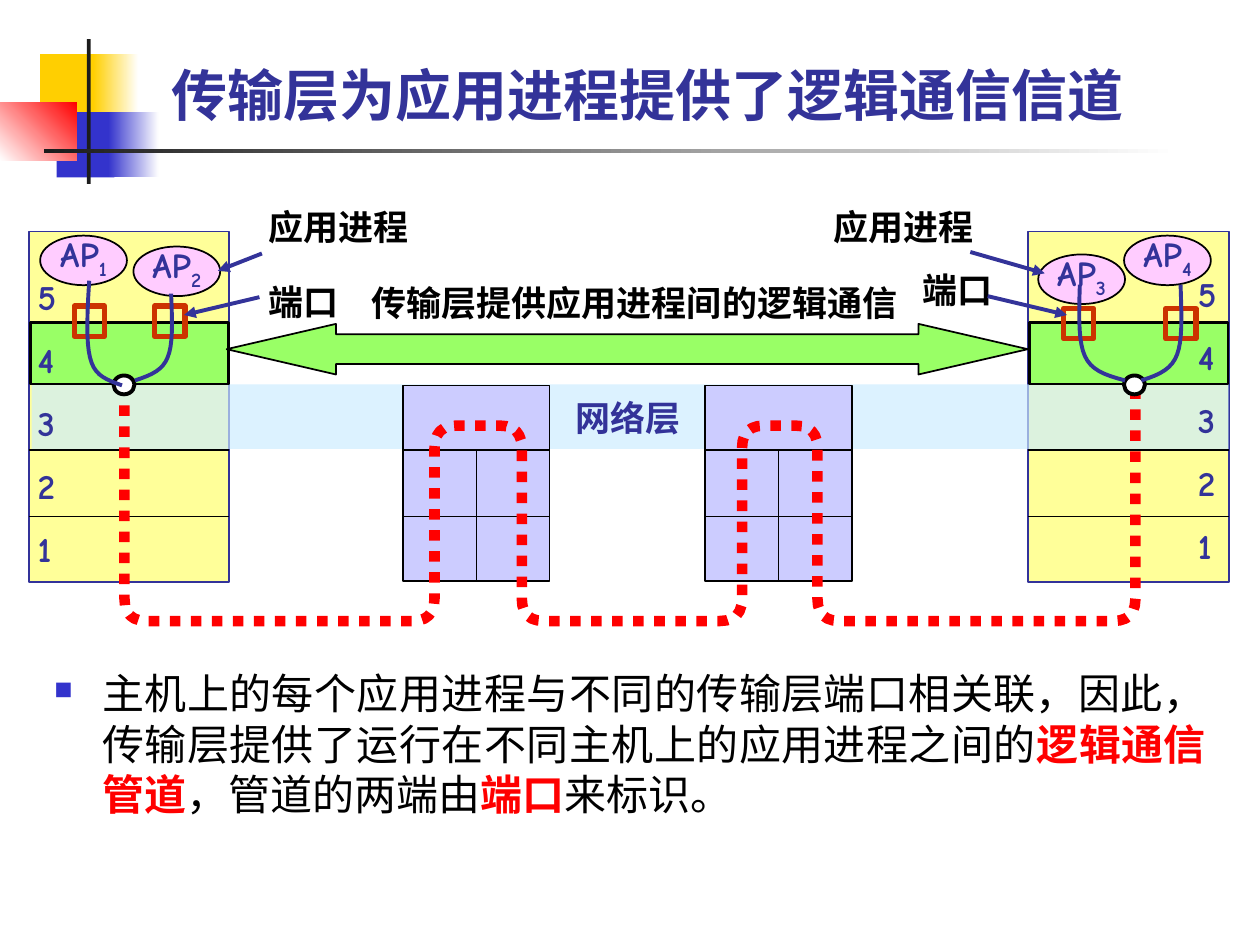
import math
from dataclasses import dataclass
from typing import Optional

import pptx
import pptx.dml.color
import pptx.enum.dml
import pptx.enum.shapes
import pptx.enum.text
import pptx.oxml.ns
import pptx.oxml.xmlchemy
import pptx.util
from lxml import etree

Cm, Pt = pptx.util.Cm, pptx.util.Pt
SHAPE = pptx.enum.shapes.MSO_SHAPE
ANCHOR = pptx.enum.text.MSO_ANCHOR
ALIGN = pptx.enum.text.PP_ALIGN
qn = pptx.oxml.ns.qn
Point = tuple[float, float]


@dataclass(frozen=True)
class Theme:
    heading_font: str = "Noto Sans CJK SC"
    label_font: str = "Comic Neue"
    title_size: int = 32
    body_size: int = 24
    label_size: int = 20
    navy: str = "333399"
    black: str = "000000"
    white: str = "FFFFFF"
    red: str = "FF0000"
    gold: str = "FFCF01"
    blue: str = "3333CC"
    charcoal: str = "1C1C1C"
    host: str = "FFFF99"
    router: str = "CCCCFF"
    transport: str = "99FF66"
    network: str = "CCECFF"
    process: str = "FFCCFF"
    port: str = "CC3300"


THEME = Theme()


@dataclass(frozen=True)
class Box:
    left: float
    top: float
    width: float
    height: float

    def lengths(self):
        return Cm(self.left), Cm(self.top), Cm(self.width), Cm(self.height)


@dataclass(frozen=True)
class Process:
    number: str
    oval: Point
    port: Point
    link: tuple[Point, ...]


@dataclass(frozen=True)
class Label:
    text: str
    left: float
    top: float
    width: float
    color: str = THEME.black


def rgb(color: str):
    return pptx.dml.color.RGBColor.from_string(color)


def set_line(shape, color: Optional[str], width: float) -> None:
    if color is None:
        shape.line.fill.background()
    else:
        shape.line.color.rgb = rgb(color)
        shape.line.width = Pt(width)


def add_shape(slide, kind, box: Box, fill: Optional[str] = None,
              line: Optional[str] = None, width: float = 1):
    shape = slide.shapes.add_shape(kind, *box.lengths())
    shape.shadow.inherit = False
    if fill:
        shape.fill.solid()
        shape.fill.fore_color.rgb = rgb(fill)
    else:
        shape.fill.background()
    set_line(shape, line, width)
    return shape


def add_gradient(slide, box: Box, start: str, end: str, angle: float = 0) -> None:
    shape = add_shape(slide, SHAPE.RECTANGLE, box)
    shape.fill.gradient()
    shape.fill.gradient_angle = angle
    for stop, color in zip(shape.fill.gradient_stops, (start, end)):
        stop.color.rgb = rgb(color)


def add_line(slide, start: Point, end: Point, color: str = THEME.black,
             width: float = 1, arrow: bool = False):
    connector = slide.shapes.add_connector(
        pptx.enum.shapes.MSO_CONNECTOR.STRAIGHT, *map(Cm, start + end))
    set_line(connector, color, width)
    if arrow:
        tail = etree.SubElement(connector.line._get_or_add_ln(), qn("a:tailEnd"))
        tail.set("type", "triangle")
    etree.SubElement(connector._element.spPr, qn("a:effectLst"))
    return connector


def bezier(controls, steps: int = 16) -> list[Point]:
    """Sample a Bézier curve of any degree."""
    degree = len(controls) - 1

    def at(t: float, axis: int) -> float:
        return sum(math.comb(degree, i) * t**i * (1 - t)**(degree - i) * point[axis]
                   for i, point in enumerate(controls))

    return [(at(i / steps, 0), at(i / steps, 1)) for i in range(steps + 1)]


def rounded(corners: list[Point], radius: float) -> list[Point]:
    """Replace each inner corner of a polyline by a small curve."""
    def toward(start: Point, end: Point) -> Point:
        share = radius / math.dist(start, end)
        return tuple(a + (b - a) * share for a, b in zip(start, end))

    points = [corners[0]]
    for before, corner, after in zip(corners, corners[1:], corners[2:]):
        points += bezier((toward(corner, before), corner, toward(corner, after)), 6)
    return points + [corners[-1]]


def add_curve(slide, points: list[Point], color: str, width: float):
    first, *rest = [(Cm(x), Cm(y)) for x, y in points]
    builder = slide.shapes.build_freeform(*first)
    builder.add_line_segments(rest, close=False)
    curve = builder.convert_to_shape()
    curve.shadow.inherit = False
    curve.fill.background()
    set_line(curve, color, width)
    return curve


def set_font(paragraph, name: str, size: int, color: str, bold: bool) -> None:
    font = paragraph.font
    font.name, font.size, font.bold = name, Pt(size), bold
    font.color.rgb = rgb(color)


def add_text(slide, box: Box, lines: list[str], color: str, size: int = THEME.label_size,
             name: str = THEME.label_font, spacing: float = 1, anchor=ANCHOR.TOP):
    frame = slide.shapes.add_textbox(*box.lengths()).text_frame
    frame.word_wrap = False
    frame.vertical_anchor = anchor
    frame.text = "\n".join(lines)
    for paragraph in frame.paragraphs:
        paragraph.line_spacing = spacing
        set_font(paragraph, name, size, color, True)


def add_decoration(slide) -> None:
    add_shape(slide, SHAPE.RECTANGLE, Box(0.81, 1.09, 1.22, 1.32), THEME.gold)
    add_gradient(slide, Box(1.88, 1.09, 0.91, 1.32), THEME.gold, THEME.white)
    add_shape(slide, SHAPE.RECTANGLE, Box(1.14, 2.26, 1.17, 1.32), THEME.blue)
    add_gradient(slide, Box(2.18, 2.26, 1.02, 1.32), THEME.blue, THEME.white)
    add_gradient(slide, Box(0, 2.06, 1.55, 1.17), THEME.white, THEME.red, 45)
    add_shape(slide, SHAPE.RECTANGLE, Box(1.75, 0.79, 0.08, 2.92), THEME.charcoal)
    add_gradient(slide, Box(0.89, 3, 22.86, 0.08), THEME.charcoal, THEME.white)


def add_dividers(slide, left: float, width: float) -> None:
    for y in (9.07, 10.41):
        add_line(slide, (left, y), (left + width, y))


def add_router(slide, left: float) -> None:
    body = Box(left, 7.77, 2.95, 3.94)
    shape = add_shape(slide, SHAPE.RECTANGLE, body, THEME.router, THEME.black)
    add_dividers(slide, left, body.width)
    middle = left + body.width / 2
    connector = add_line(slide, (middle, 9.07), (middle, body.top + body.height))
    connector.end_connect(shape, 2)


def add_layers(slide) -> None:
    hosts = (0.58, 20.73)
    for left in hosts:
        add_shape(slide, SHAPE.RECTANGLE, Box(left, 4.67, 4.04, 7.06), THEME.host, THEME.navy)
    band = add_shape(slide, SHAPE.RECTANGLE, Box(0.64, 7.75, 24.13, 1.3), THEME.network)
    color = band._element.spPr.find(".//" + qn("a:srgbClr"))
    etree.SubElement(color, qn("a:alpha")).set("val", "68000")
    for left, number_left, number_top in zip(hosts, (0.51, 23.9), (5, 4.95)):
        add_dividers(slide, left, 4.04)
        add_shape(slide, SHAPE.RECTANGLE, Box(left + 0.03, 6.5, 4, 1.24),
                  THEME.transport, THEME.black, 1.5)
        add_text(slide, Box(number_left, number_top, 0.94, 6.53), list("54321"),
                 THEME.navy, spacing=1.5)
    for left in (8.13, 14.22):
        add_router(slide, left)


def add_route(slide) -> None:
    bottom, top, ends = 12.52, 8.58, 7.75
    columns = (2.51, 8.76, 10.52, 14.96, 16.48, 22.89)
    corners = [(columns[0], ends)]
    for i, (left, right) in enumerate(zip(columns, columns[1:])):
        y = top if i % 2 else bottom
        corners += [(left, y), (right, y)]
    corners.append((columns[-1], ends))
    route = add_curve(slide, rounded(corners, 0.45), THEME.red, 6)
    route.line.dash_style = pptx.enum.dml.MSO_LINE.ROUND_DOT


def add_process(slide, process: Process) -> None:
    oval = add_shape(slide, SHAPE.OVAL, Box(*process.oval, 1.75, 1), THEME.process, THEME.black)
    frame = oval.text_frame
    frame.word_wrap = False
    frame.margin_left = frame.margin_right = frame.margin_top = 0
    frame.margin_bottom = Cm(0.15)
    frame.vertical_anchor = ANCHOR.MIDDLE
    paragraph = frame.paragraphs[0]
    paragraph.alignment = ALIGN.CENTER
    set_font(paragraph, THEME.label_font, THEME.label_size, THEME.navy, True)
    for text, baseline in (("AP", 0), (process.number, -25000)):
        run = paragraph.add_run()
        run.text = text
        run.font.color.rgb = rgb(THEME.navy)
        run._r.get_or_add_rPr().set("baseline", str(baseline))
    add_shape(slide, SHAPE.RECTANGLE, Box(*process.port, 0.61, 0.61), line=THEME.port, width=3)
    add_curve(slide, bezier(process.link), THEME.navy, 2.25)


def add_body(slide) -> None:
    frame = slide.shapes.add_textbox(*Box(0.84, 13.34, 23.72, 3.99).lengths()).text_frame
    frame.word_wrap = True
    paragraph = frame.paragraphs[0]
    paragraph.alignment = ALIGN.JUSTIFY
    properties = paragraph._p.get_or_add_pPr()
    properties.set("marL", str(Cm(0.97)))
    properties.set("indent", str(-Cm(0.97)))
    bullet_color = etree.SubElement(properties, qn("a:buClr"))
    etree.SubElement(bullet_color, qn("a:srgbClr")).set("val", THEME.blue)
    etree.SubElement(properties, qn("a:buSzPct")).set("val", "60000")
    etree.SubElement(properties, qn("a:buChar")).set("char", "■")
    paragraph.font.name = THEME.heading_font
    paragraph.font.size = Pt(THEME.body_size)
    for text, strong in (
        ("主机上的每个应用进程与不同的传输层端口相关联，因此，"
         "传输层提供了运行在不同主机上的应用进程之间的", False),
        ("逻辑通信管道", True), ("，管道的两端由", False),
        ("端口", True), ("来标识。", False),
    ):
        run = paragraph.add_run()
        run.text = text
        run.font.bold = strong
        run.font.color.rgb = rgb(THEME.red if strong else THEME.black)


PROCESSES = (
    Process("1", (0.81, 4.75), (1.5, 6.17),
            ((1.8, 5.66), (1.68, 7.49), (1.83, 7.54), (2.46, 7.77))),
    Process("2", (2.69, 4.97), (3.12, 6.17),
            ((3.45, 5.92), (3.51, 7.24), (3.45, 7.44), (2.72, 7.67))),
    Process("3", (20.93, 5.13), (21.44, 6.22),
            ((21.77, 5.74), (21.72, 7.24), (21.79, 7.44), (22.68, 7.67))),
    Process("4", (22.66, 4.75), (23.5, 6.22),
            ((23.8, 5.74), (23.85, 7.16), (23.83, 7.42), (23.01, 7.67))),
)
LABELS = (
    Label("应用进程", 5.16, 4.01, 3.35),
    Label("应用进程", 16.56, 4.01, 3.33),
    Label("端口", 5.16, 5.54, 1.93),
    Label("端口", 18.34, 5.28, 1.93),
    Label("传输层提供应用进程间的逻辑通信", 7.24, 5.56, 12.37),
    Label("网络层", 11.35, 7.87, 2.64, THEME.navy),
)
POINTERS = (
    ((5.28, 5.11), (4.39, 5.46)),
    ((19.56, 5.08), (21.06, 5.51)),
    ((19.91, 5.97), (21.51, 6.35)),
    ((5.23, 5.99), (3.71, 6.35)),
)


def main() -> None:
    presentation = pptx.Presentation()
    presentation.slide_width, presentation.slide_height = Cm(25.4), Cm(19.05)
    slide = presentation.slides.add_slide(presentation.slide_layouts[6])
    add_decoration(slide)
    add_text(slide, Box(3.2, 0.58, 21.64, 2.13), ["传输层为应用进程提供了逻辑通信信道"],
             THEME.navy, THEME.title_size, THEME.heading_font, anchor=ANCHOR.BOTTOM)
    add_layers(slide)
    add_route(slide)
    channel = add_shape(slide, SHAPE.LEFT_RIGHT_ARROW, Box(4.57, 6.53, 16.15, 1.02),
                        THEME.transport, THEME.black)
    channel.adjustments[0], channel.adjustments[1] = 0.59, 2.16
    for label in LABELS:
        add_text(slide, Box(label.left, label.top, label.width, 1.09), [label.text], label.color)
    for left in (2.29, 22.66):
        add_shape(slide, SHAPE.OVAL, Box(left, 7.57, 0.42, 0.38), THEME.white, THEME.black, 2.25)
    for process in PROCESSES:
        add_process(slide, process)
    for start, end in POINTERS:
        add_line(slide, start, end, THEME.navy, 2.25, arrow=True)
    add_body(slide)
    presentation.save("out.pptx")


if __name__ == "__main__":
    main()
